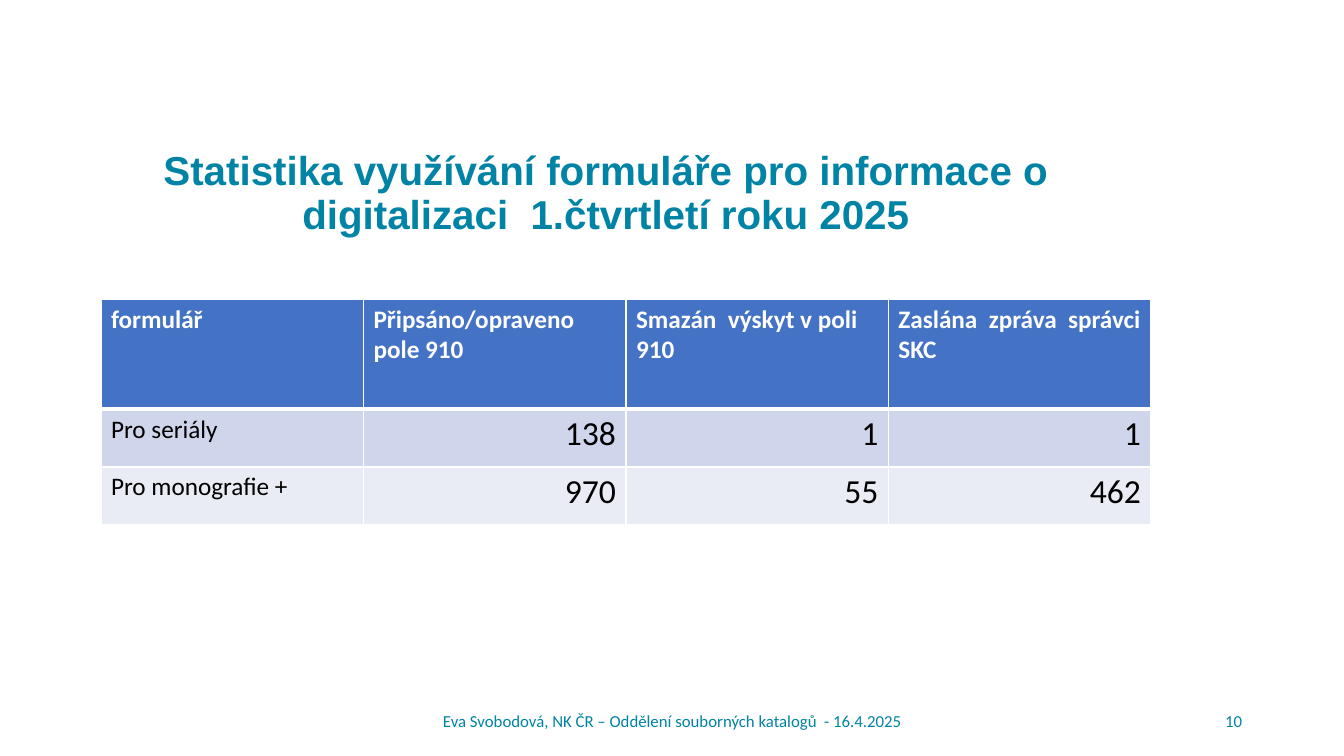
from lxml import etree
from pptx import Presentation
from pptx import util as u
from pptx.dml.color import RGBColor
from pptx.enum import text
from pptx.oxml.ns import qn

PX = 914400 / 100.8
TEAL = RGBColor(0x00, 0x83, 0xA5)
BLUE = RGBColor(0x44, 0x72, 0xC4)
BAND_DARK = RGBColor(0xCF, 0xD5, 0xEA)
BAND_LIGHT = RGBColor(0xE9, 0xEB, 0xF5)
WHITE = RGBColor(0xFF, 0xFF, 0xFF)
BLACK = RGBColor(0x00, 0x00, 0x00)
LEFT, CENTER, RIGHT = text.PP_ALIGN.LEFT, text.PP_ALIGN.CENTER, text.PP_ALIGN.RIGHT
TOP, MIDDLE = text.MSO_ANCHOR.TOP, text.MSO_ANCHOR.MIDDLE


def px(n):
    return u.Emu(round(n * PX))


def write(frame, words, font, size, color, bold, align):
    frame.text = words
    paragraph = frame.paragraphs[0]
    paragraph.alignment = align
    run_font = paragraph.runs[0].font
    run_font.name, run_font.size, run_font.bold = font, u.Pt(size), bold
    run_font.color.rgb = color


deck = Presentation()
deck.slide_width, deck.slide_height = px(1344), px(756)
slide = deck.slides.add_slide(deck.slide_layouts[6])

# Title, footer and slide number
for words, box, font, size, bold, align, anchor, spacing in (
    ("Statistika využívání formuláře pro informace o digitalizaci  1.čtvrtletí roku 2025",
     (93, 146, 1026, 68), "Arial", 28.8, True, CENTER, TOP, 0.9),
    ("Eva Svobodová, NK ČR – Oddělení souborných katalogů  - 16.4.2025",
     (93, 701, 1159, 40), "Calibri", 12, False, CENTER, MIDDLE, 1.0),
    ("10", (1139, 701, 113, 40), "Calibri", 12, False, RIGHT, MIDDLE, 1.0),
):
    frame = slide.shapes.add_textbox(*map(px, box)).text_frame
    frame.word_wrap = True
    frame.vertical_anchor = anchor
    write(frame, words, font, size, TEAL, bold, align)
    frame.paragraphs[0].line_spacing = spacing

# Table of form usage
rows = (
    ("formulář", "Připsáno/opraveno pole 910", "Smazán  výskyt v poli 910",
     "Zaslána  zpráva  správci SKC"),
    ("Pro seriály", "138", "1", "1"),
    ("Pro monografie +", "970", "55", "462"),
)
row_fills = (BLUE, BAND_DARK, BAND_LIGHT)
row_heights = (110, 58, 58)
usage = slide.shapes.add_table(3, 4, px(101), px(299), px(1050), px(226)).table
for column in usage.columns:
    column.width = px(262.5)

for r, values in enumerate(rows):
    usage.rows[r].height = px(row_heights[r])
    header = r == 0
    for c, value in enumerate(values):
        cell = usage.cell(r, c)
        number = not header and c > 0
        write(cell.text_frame, value, "Calibri", 24 if number else 18,
              WHITE if header else BLACK, header, RIGHT if number else LEFT)

        # White borders, thicker between the header and the body
        properties = cell._tc.get_or_add_tcPr()
        for side in ("L", "R", "T", "B"):
            thick = (r, side) in ((0, "B"), (1, "T"))
            line = etree.SubElement(properties, qn(f"a:ln{side}"), w=str(u.Pt(3 if thick else 1)))
            solid = etree.SubElement(line, qn("a:solidFill"))
            etree.SubElement(solid, qn("a:srgbClr"), val=str(WHITE))
        cell.fill.solid()
        cell.fill.fore_color.rgb = row_fills[r]

deck.save("out.pptx")
